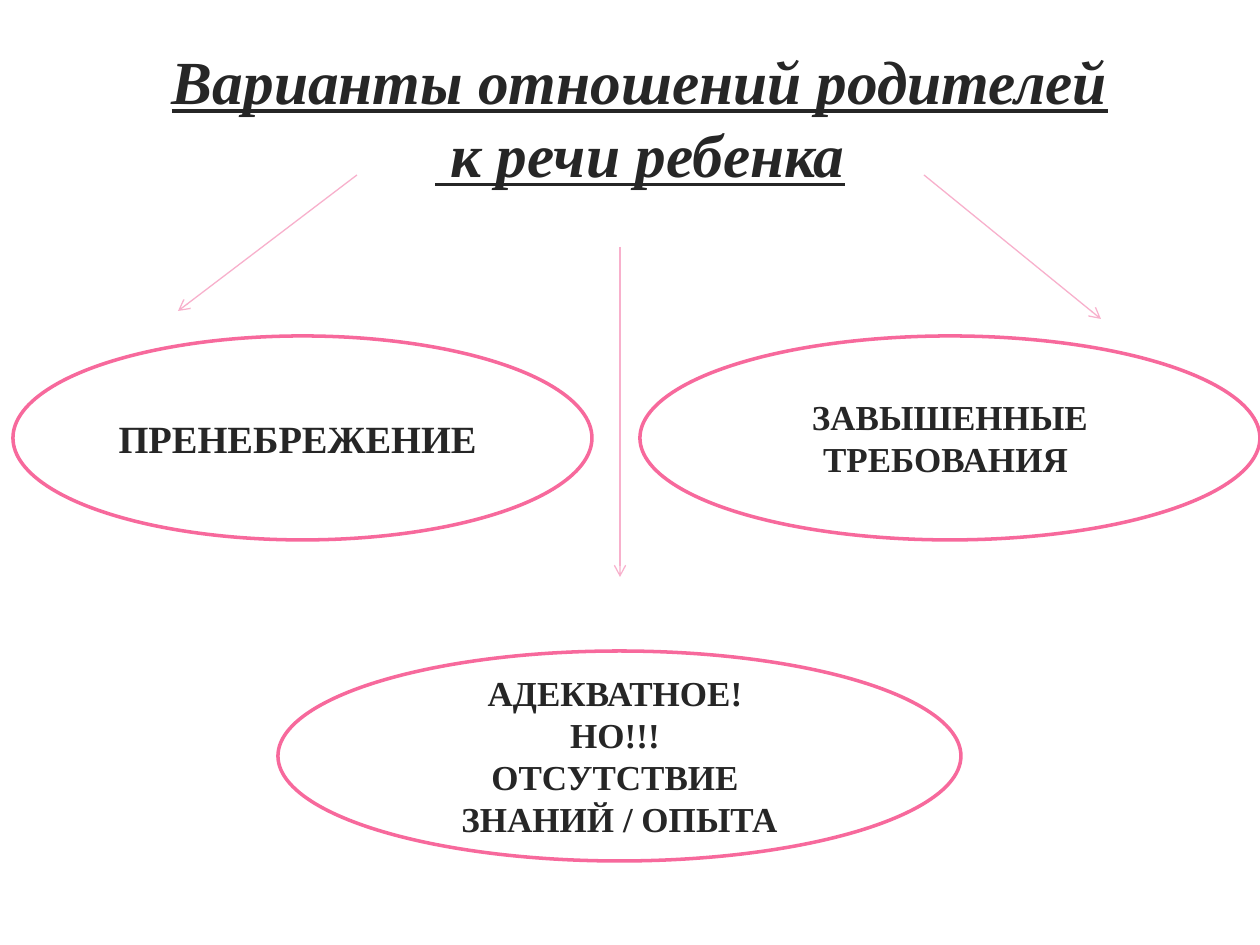
"""Build a slide on parents' attitudes to a child's speech."""
from lxml import etree
from pptx import Presentation
from pptx.dml.color import RGBColor
from pptx.enum.shapes import MSO_CONNECTOR, MSO_SHAPE
from pptx.enum.text import MSO_ANCHOR, MSO_AUTO_SIZE, PP_ALIGN
from pptx.oxml.ns import qn
from pptx.util import Pt

PX = 914400 // 126
OVAL = MSO_SHAPE.OVAL
STRAIGHT = MSO_CONNECTOR.STRAIGHT
MIDDLE = MSO_ANCHOR.MIDDLE
NO_AUTOFIT = MSO_AUTO_SIZE.NONE
CENTER = PP_ALIGN.CENTER


def color(value):
    return RGBColor.from_string(value)


def write(tf, lines, size, italic=False):
    tf.vertical_anchor = MIDDLE
    for i, line in enumerate(lines):
        p = tf.paragraphs[0] if i == 0 else tf.add_paragraph()
        p.add_run().text = line
        p.alignment = CENTER
        p.font.name = "Times New Roman"
        p.font.size = Pt(size)
        p.font.bold = True
        p.font.italic = p.font.underline = italic
        p.font.color.rgb = color("262626")


prs = Presentation()
prs.slide_width, prs.slide_height = 1260 * PX, 945 * PX
s = prs.slides.add_slide(prs.slide_layouts[5])

title = s.shapes.title
title.left, title.top, title.width, title.height = [v * PX for v in (165, 73, 950, 87)]
tf = title.text_frame
tf.auto_size = NO_AUTOFIT
tf.word_wrap = False
tf.margin_left = tf.margin_right = 0
write(tf, ["Варианты отношений родителей", " к речи ребенка"], 35, italic=True)

arrows = [(357, 175, 178, 311), (620, 247, 620, 577), (924, 175, 1101, 319)]
for ends in arrows:
    c = s.shapes.add_connector(STRAIGHT, *[v * PX for v in ends])
    c.line.color.rgb = color("F8B0CC")
    c.line.width = Pt(0.75)
    sp_pr = c._element.spPr
    etree.SubElement(sp_pr.find(qn("a:ln")), qn("a:tailEnd"), type="arrow")
    etree.SubElement(sp_pr, qn("a:effectLst"))

ovals = [
    (13, 336, 579, 204, 22, ["ПРЕНЕБРЕЖЕНИЕ "]),
    (278, 651, 683, 210, 20, ["АДЕКВАТНОЕ! ", "НО!!! ", "ОТСУТСТВИЕ ", "ЗНАНИЙ / ОПЫТА"]),
    (640, 336, 620, 204, 20, ["ЗАВЫШЕННЫЕ ТРЕБОВАНИЯ "]),
]
for x, y, w, h, size, lines in ovals:
    sp = s.shapes.add_shape(OVAL, x * PX, y * PX, w * PX, h * PX)
    sp.shadow.inherit = False
    sp.fill.solid()
    sp.fill.fore_color.rgb = color("FFFFFF")
    sp.line.color.rgb = color("F7699C")
    sp.line.width = Pt(2)
    sp.text_frame.word_wrap = True
    write(sp.text_frame, lines, size)

prs.save("out.pptx")
